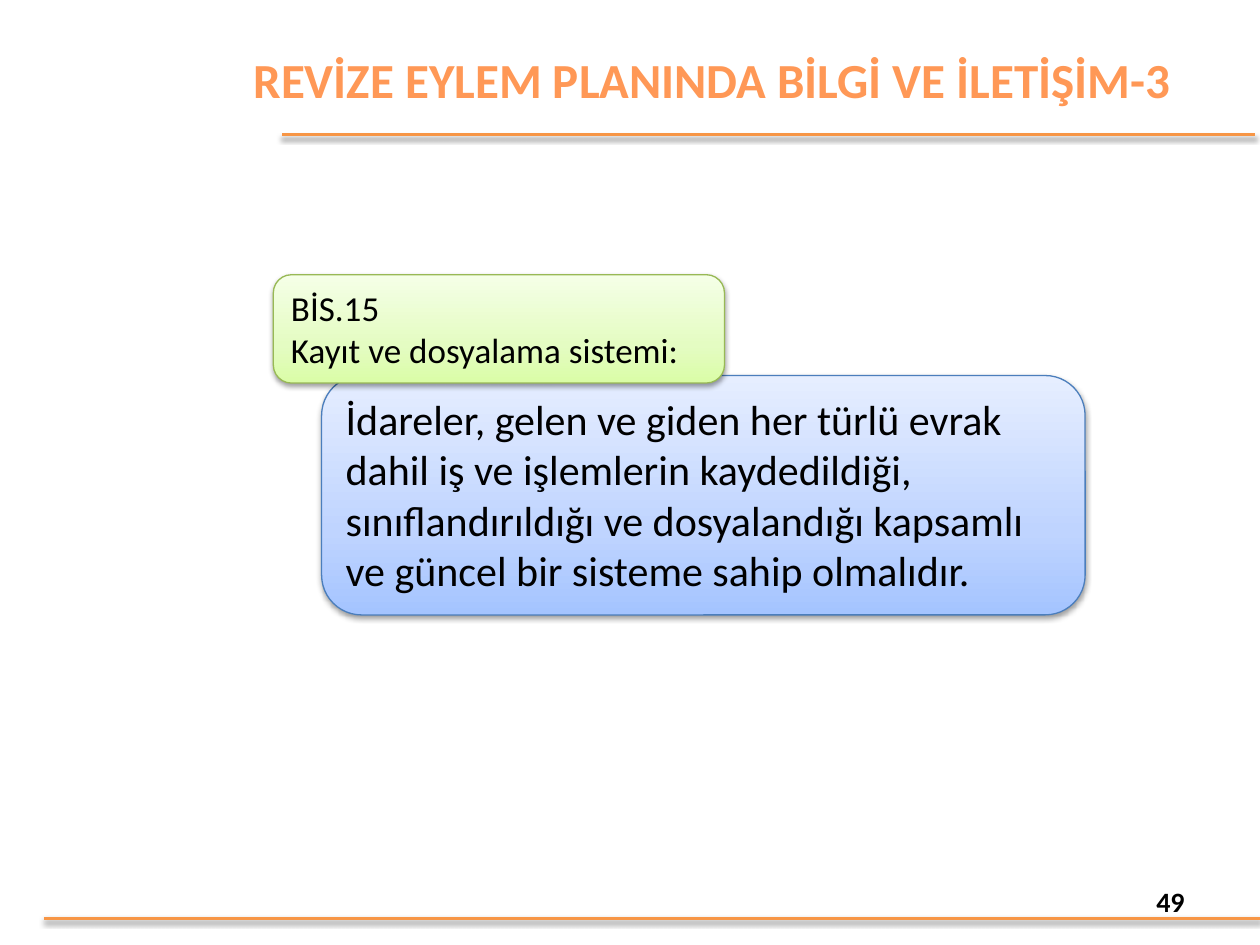
import copy
from dataclasses import dataclass

import pptx
import pptx.util
import pptx.oxml
import pptx.oxml.ns
import pptx.dml.color
import pptx.enum.shapes
import pptx.enum.text

Pt = pptx.util.Pt
RGB = pptx.dml.color.RGBColor.from_string
ALIGN = pptx.enum.text.PP_ALIGN
ANCHOR = pptx.enum.text.MSO_ANCHOR
FIT = pptx.enum.text.MSO_AUTO_SIZE


@dataclass(frozen=True)
class Theme:
    font: str = "Calibri"
    ink: str = "000000"
    rule: str = "F79646"
    title: str = "FF9856"
    blue: tuple = ("A4C4FF", "BFD4FF", "E6EEFF")
    green: tuple = ("DAFDA7", "E4FCC2", "F5FFE7")
    blue_edge: str = "4B7EBC"
    green_edge: str = "98B955"
    stops: tuple = (0, 0.35, 1)
    head_size: int = 28
    body_size: int = 24
    tag_size: int = 20
    num_size: int = 16


THEME = Theme()


def cast(shape):
    ns = pptx.oxml.ns.nsdecls("a")
    shape._element.spPr.append(pptx.oxml.parse_xml(
        f'<a:effectLst {ns}><a:outerShdw blurRad="{Pt(3.1)}" dist="{Pt(1.6)}" '
        'dir="5400000" rotWithShape="0"><a:srgbClr val="000000">'
        '<a:alpha val="38000"/></a:srgbClr></a:outerShdw></a:effectLst>'))


def write(frame, lines, size, color, align=ALIGN.LEFT, bold=False):
    frame.word_wrap = True
    for i, line in enumerate(lines):
        para = frame.add_paragraph() if i else frame.paragraphs[0]
        para.alignment = align
        run = para.add_run()
        run.text = line
        font = run.font
        font.name, font.size, font.bold = THEME.font, Pt(size), bold
        font.color.rgb = RGB(color)


def add_rule(slide, left, top, width):
    line = slide.shapes.add_connector(
        pptx.enum.shapes.MSO_CONNECTOR.STRAIGHT,
        Pt(left), Pt(top), Pt(left + width), Pt(top))
    line.line.color.rgb = RGB(THEME.rule)
    line.line.width = Pt(2)
    cast(line)


def shade(fill, colors):
    fill.gradient()
    fill.gradient_angle = 90
    first = fill.gradient_stops[0]._gs
    first.addnext(copy.deepcopy(first))
    for stop, place, color in zip(fill.gradient_stops, THEME.stops, colors):
        stop.position = place
        stop.color.rgb = RGB(color)


def add_card(slide, box, lines, size, colors, edge):
    card = slide.shapes.add_shape(
        pptx.enum.shapes.MSO_SHAPE.ROUNDED_RECTANGLE, *map(Pt, box))
    shade(card.fill, colors)
    card.line.color.rgb = RGB(edge)
    card.line.width = Pt(0.75)
    cast(card)
    frame = card.text_frame
    frame.vertical_anchor = ANCHOR.TOP
    frame.auto_size = FIT.SHAPE_TO_FIT_TEXT
    write(frame, lines, size, THEME.ink)


def add_head(slide, box, text):
    title = slide.shapes.title
    title.left, title.top, title.width, title.height = map(Pt, box)
    frame = title.text_frame
    frame.auto_size = FIT.NONE
    frame.vertical_anchor = ANCHOR.MIDDLE
    write(frame, [text], THEME.head_size, THEME.title, ALIGN.CENTER, True)
    left, top, width, height = box
    add_rule(slide, left + 28, top + height + 13, width + 8.8)


def add_foot(slide, box, number):
    left, top, width, height = box
    add_rule(slide, left, top + height - 4.2, width)
    label = slide.shapes.add_textbox(
        Pt(left + width - 203.8), Pt(top), Pt(167.8), Pt(height))
    label.text_frame.vertical_anchor = ANCHOR.MIDDLE
    write(label.text_frame, [number], THEME.num_size, THEME.ink,
          ALIGN.RIGHT, True)


def add_rule_text(slide, box, tag, body):
    left, top, width, height = box
    add_card(slide, (left + 27.6, top + 57.6, width - 27.6, height - 57.6),
             body, THEME.body_size, THEME.blue, THEME.blue_edge)
    add_card(slide, (left, top, 257.8, 61.9),
             tag, THEME.tag_size, THEME.green, THEME.green_edge)


def main():
    deck = pptx.Presentation()
    deck.slide_width, deck.slide_height = Pt(720), Pt(540)
    slide = deck.slides.add_slide(deck.slide_layouts[5])
    add_foot(slide, (25.2, 500.4, 694.8, 28.8), "49")
    add_rule_text(
        slide, (156.2, 157, 463.9, 194.4),
        ["BİS.15", "Kayıt ve dosyalama sistemi:"],
        ["İdareler, gelen ve giden her türlü evrak dahil iş ve işlemlerin "
         "kaydedildiği, sınıflandırıldığı ve dosyalandığı kapsamlı ve güncel "
         "bir sisteme sahip olmalıdır."])
    add_head(slide, (133.2, 26, 547.2, 38),
             "REVİZE EYLEM PLANINDA BİLGİ VE İLETİŞİM-3")
    deck.save("out.pptx")


if __name__ == "__main__":
    main()
